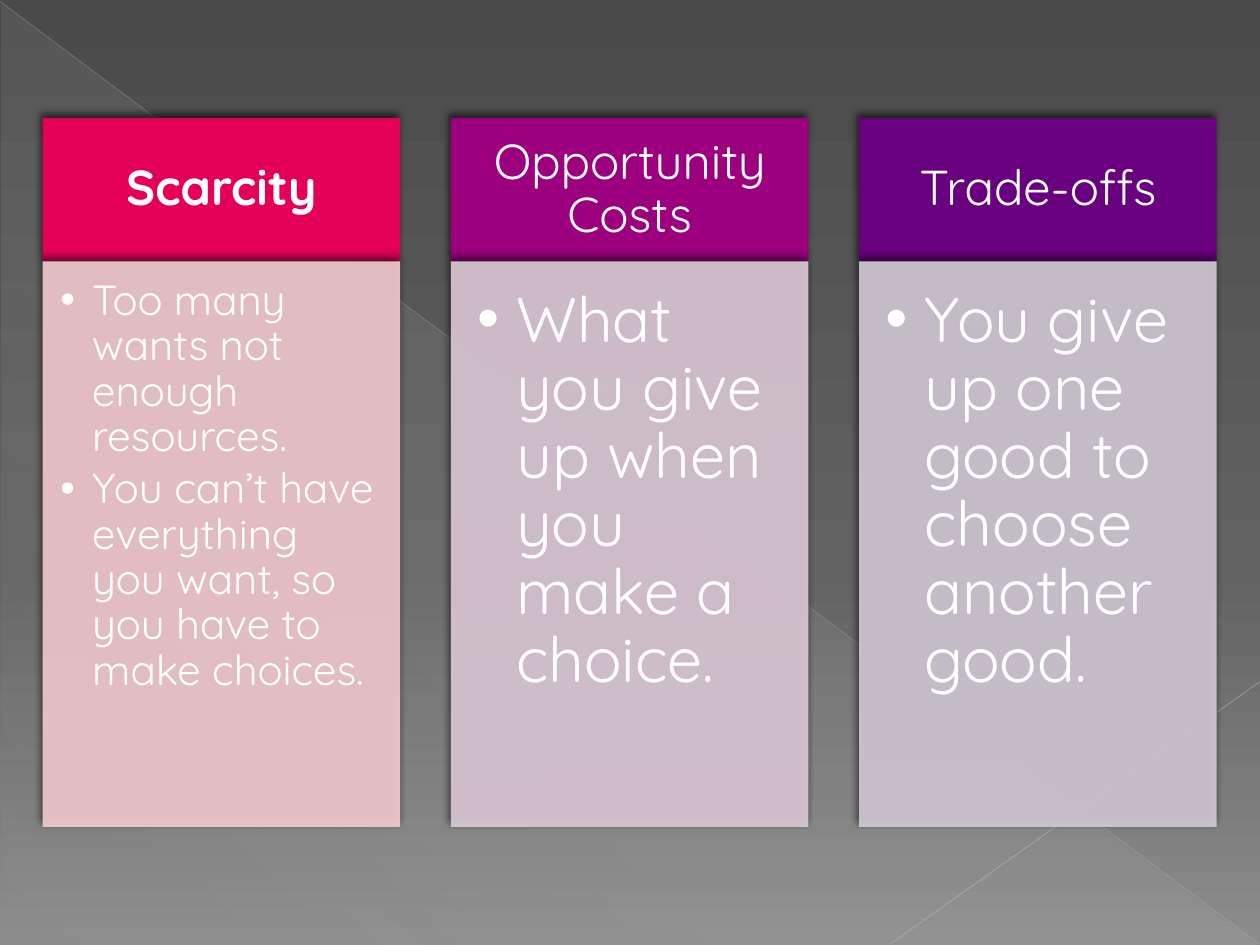
"""Build a slide with three columns: scarcity, opportunity costs and trade-offs."""
from lxml import etree
from pptx import Presentation
from pptx import util as u
from pptx.dml.color import RGBColor
from pptx.enum import shapes, text
from pptx.oxml import parse_xml
from pptx.oxml.ns import nsdecls, qn


def paint(fill, color, alpha=100):
    fill.solid()
    fill.fore_color.rgb = RGBColor.from_string(color)
    if alpha < 100:
        clr = fill._xPr.find(".//" + qn("a:srgbClr"))
        etree.SubElement(clr, qn("a:alpha"), val=str(alpha * 1000))


def write(sp, lines, size, insets, bold=False, indent=0, after=0,
          align=text.PP_ALIGN.LEFT, anchor=text.MSO_ANCHOR.TOP):
    tf = sp.text_frame
    tf.word_wrap = True
    tf.vertical_anchor = anchor
    tf.margin_left, tf.margin_top, tf.margin_right, tf.margin_bottom = map(u.Cm, insets)
    tf.text = "\n".join(lines)
    for p in tf.paragraphs:
        p.alignment = align
        p.line_spacing = 0.9
        p.space_after = u.Pt(after)
        r = p.runs[0]
        r.font.name = "Quicksand"
        r.font.size = u.Pt(size)
        r.font.bold = bold
        paint(r.font.fill, "FFFFFF")
        if indent:
            pPr = p._p.get_or_add_pPr()
            pPr.set("marL", str(u.Cm(indent)))
            pPr.set("indent", str(-u.Cm(indent)))
            etree.SubElement(pPr, qn("a:buFont"), typeface="Arial")
            etree.SubElement(pPr, qn("a:buChar"), char="•")


prs = Presentation()
prs.slide_width, prs.slide_height = u.Cm(25.4), u.Cm(19.05)
s = prs.slides.add_slide(prs.slide_layouts[6])

tri = s.shapes.add_shape(shapes.MSO_SHAPE.RIGHT_TRIANGLE,
                         u.Cm(0.03), u.Cm(0.05), u.Cm(25.35), u.Cm(19))
tri.shadow.inherit = False
tri.line.fill.background()
gradients = [
    (s.background.fill, 90, [(0, "4A4A4A", 100), (60, "626262", 100), (100, "8C8C8C", 100)]),
    (tri.fill, 133, [(0, "D2D2D2", 10), (70, "D2D2D2", 8), (100, "D2D2D2", 1)]),
]
for fill, angle, stops in gradients:
    paint(fill, stops[0][1])
    solid = fill._xPr.find(qn("a:solidFill"))
    gs = "".join(f'<a:gs pos="{pos * 1000}"><a:srgbClr val="{color}">'
                 f'<a:alpha val="{alpha * 1000}"/></a:srgbClr></a:gs>'
                 for pos, color, alpha in stops)
    fill._xPr.replace(solid, parse_xml(
        f'<a:gradFill {nsdecls("a")} rotWithShape="1"><a:gsLst>{gs}</a:gsLst>'
        f'<a:lin ang="{angle * 60000}" scaled="0"/></a:gradFill>'))

for ends, color, width, alpha in [
    ((0, 0.03, 25.37, 19.02), "BFBFBF", 0.39, 35),
    ((25.4, 13.74, 17.96, 19.02), "C6C6C6", 0.47, 45),
]:
    line = s.shapes.add_connector(shapes.MSO_CONNECTOR.STRAIGHT, *map(u.Cm, ends))
    line.line.width = u.Pt(width)
    paint(line.line.fill, color, alpha)
    etree.SubElement(line._element.spPr, qn("a:effectLst"))

left, pitch, width = 0.86, 8.23, 7.21
top, head_h, body_h = 2.38, 2.89, 11.4
small = dict(size=24, insets=(0.36, 0.36, 0.48, 0.53), indent=0.64, after=4)
large = dict(size=36, insets=(0.53, 0.53, 0.71, 0.81), indent=0.79, after=6)
heading = dict(size=28, insets=(0.56, 0.3, 0.56, 0.3),
               align=text.PP_ALIGN.CENTER, anchor=text.MSO_ANCHOR.MIDDLE)
columns = [
    ("Scarcity", True, "E40059", "F5CCD1", small,
     ["Too many wants not enough resources.",
      "You can’t have everything you want, so you have to make choices."]),
    ("Opportunity Costs", False, "9C007F", "DECCD8", large,
     ["What you give up when you make a choice."]),
    ("Trade-offs", False, "68007F", "D4CCD8", large,
     ["You give up one good to choose another good."]),
]
for i, (title, bold, dark, light, body, lines) in enumerate(columns):
    for y, h, color, alpha, words, style in [
        (top, head_h, dark, 100, [title], dict(heading, bold=bold)),
        (top + head_h, body_h, light, 90, lines, body),
    ]:
        sp = s.shapes.add_shape(shapes.MSO_SHAPE.RECTANGLE, u.Cm(left + i * pitch),
                                u.Cm(y), u.Cm(width), u.Cm(h))
        paint(sp.fill, color, alpha)
        sp.line.fill.background()
        sp.shadow.inherit = False
        sp._element.spPr.find(qn("a:effectLst")).append(parse_xml(
            f'<a:outerShdw {nsdecls("a")} blurRad="{u.Pt(4)}" dist="{u.Pt(3)}" '
            f'dir="{245 * 60000}" rotWithShape="0"><a:srgbClr val="000000">'
            '<a:alpha val="60000"/></a:srgbClr></a:outerShdw>'))
        write(sp, words, **style)

prs.save("out.pptx")
